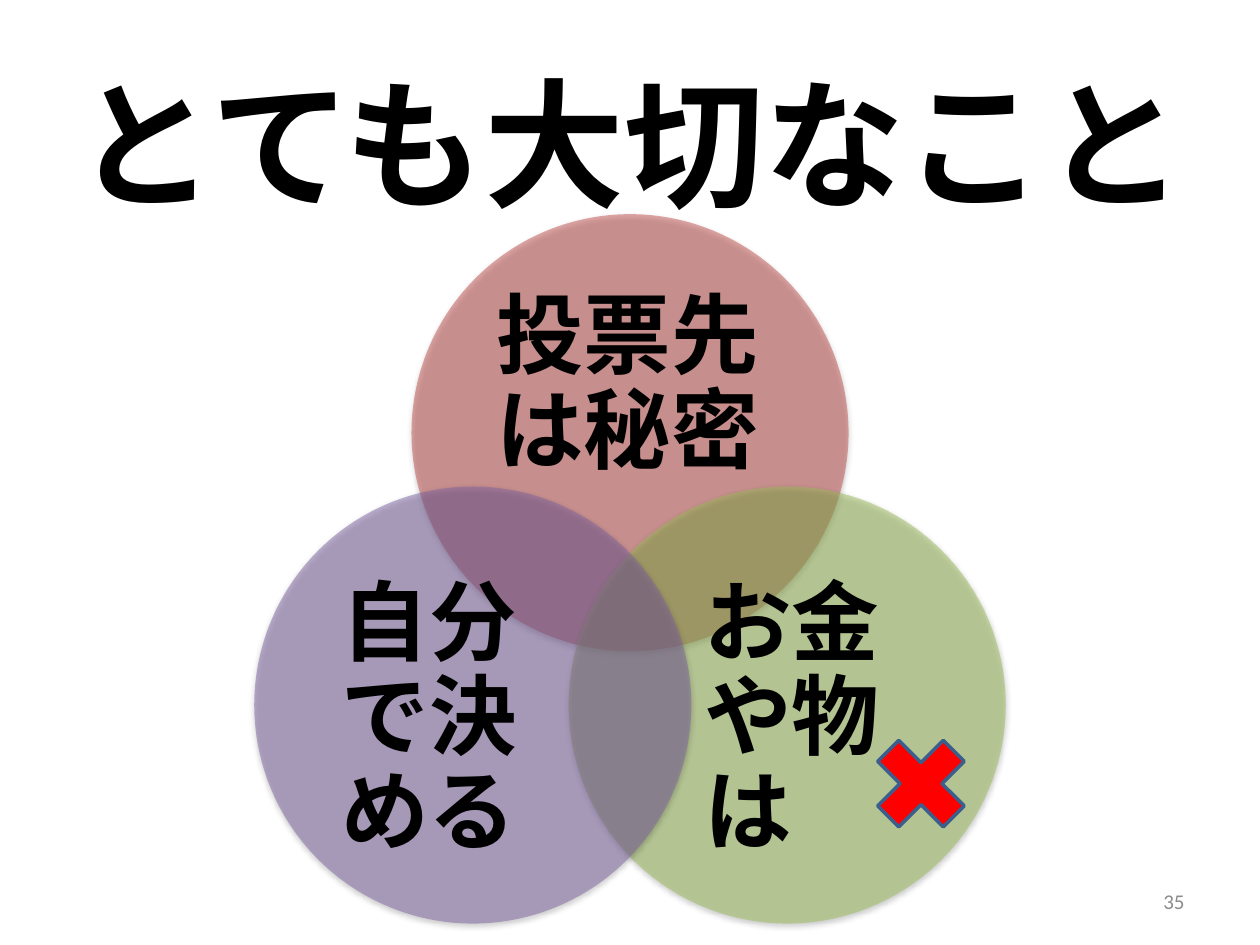
from math import cos, radians, sin

from lxml import etree
from pptx import Presentation
from pptx.dml.color import RGBColor
from pptx.enum.shapes import MSO_SHAPE
from pptx.enum.text import MSO_ANCHOR, PP_ALIGN
from pptx.oxml.ns import qn
from pptx.util import Inches, Pt

OVAL, CROSS = MSO_SHAPE.OVAL, MSO_SHAPE.MATH_MULTIPLY
LEFT, CENTER, RIGHT = PP_ALIGN.LEFT, PP_ALIGN.CENTER, PP_ALIGN.RIGHT
MIDDLE = MSO_ANCHOR.MIDDLE
TITLE_ONLY = 5

COLORS = {
    "text": "000000", "number": "8C8C8C", "shadow": "000000",
    "secret": "C0504D", "money": "9BBB59", "decide": "8064A2",
    "cross": "FF0000", "cross_line": "3A5F8C",
}
JAPANESE, LATIN = "Noto Sans CJK JP", "Calibri"

# Angle of the circle from the centre, colour, label, alignment,
# and label box as shares of the circle's diameter
CIRCLES = [
    (-90, "secret", "投票先は秘密", CENTER, (0.13, 0.17, 0.73, 0.45)),
    (30, "money", "お金や物は", LEFT, (0.31, 0.26, 0.6, 0.55)),
    (150, "decide", "自分で決める", CENTER, (0.1, 0.26, 0.6, 0.55)),
]


def color(name):
    return RGBColor.from_string(COLORS[name])


def inches(box):
    return [Inches(length) for length in box]


def write(shape, text, size, font_name, color_name, alignment, bold=False):
    """Fill a shape with one formatted, vertically centred paragraph."""
    frame = shape.text_frame
    frame.text = text
    frame.word_wrap = True
    frame.vertical_anchor = MIDDLE
    paragraph = frame.paragraphs[0]
    paragraph.alignment = alignment
    font = paragraph.runs[0].font
    font.name, font.size, font.bold = font_name, Pt(size), bold
    font.color.rgb = color(color_name)
    east_asian = etree.SubElement(font._element, qn("a:ea"))
    east_asian.set("typeface", font_name)
    return paragraph


def add_title(slide, box):
    title = slide.shapes.title
    title.left, title.top, title.width, title.height = inches(box)
    write(title, "とても大切なこと", 80, JAPANESE, "text", CENTER, True)


def make_translucent(shape, percent):
    fill_color = shape._element.spPr.find(qn("a:solidFill"))[0]
    etree.SubElement(fill_color, qn("a:alpha")).set("val", str(percent * 1000))


def add_shadow(shape):
    shape.shadow.inherit = False
    effects = shape._element.spPr.find(qn("a:effectLst"))
    shadow = etree.SubElement(
        effects, qn("a:outerShdw"), blurRad=str(Pt(3.1)), dist=str(Pt(1.6)),
        dir=str(90 * 60000), rotWithShape="0")
    tone = etree.SubElement(shadow, qn("a:srgbClr"), val=COLORS["shadow"])
    etree.SubElement(tone, qn("a:alpha"), val="38000")


def add_circle(slide, box, fill_name, label, alignment, label_shares):
    left, top, diameter, _ = box
    circle = slide.shapes.add_shape(OVAL, *inches(box))
    circle.fill.solid()
    circle.fill.fore_color.rgb = color(fill_name)
    make_translucent(circle, 50)
    circle.line.fill.background()
    add_shadow(circle)

    x, y, width, height = [share * diameter for share in label_shares]
    text_box = slide.shapes.add_textbox(*inches((left + x, top + y, width, height)))
    frame = text_box.text_frame
    frame.margin_left = frame.margin_right = 0
    frame.margin_top = frame.margin_bottom = 0
    paragraph = write(text_box, label, 50, JAPANESE, "text", alignment, True)
    paragraph.line_spacing = 0.9
    paragraph.space_after = Pt(17.5)


def add_venn(slide, box):
    """Three circles, with centres evenly spread around one point."""
    left, top, width, height = box
    diameter = height / 1.623
    orbit = (height - diameter) / (1 + sin(radians(30)))
    center_x = left + width / 2
    center_y = top + diameter / 2 + orbit
    for angle, *content in CIRCLES:
        x = center_x + orbit * cos(radians(angle)) - diameter / 2
        y = center_y + orbit * sin(radians(angle)) - diameter / 2
        add_circle(slide, (x, y, diameter, diameter), *content)


def add_cross(slide, box):
    cross = slide.shapes.add_shape(CROSS, *inches(box))
    cross.shadow.inherit = False
    cross.fill.solid()
    cross.fill.fore_color.rgb = color("cross")
    cross.line.color.rgb = color("cross_line")
    cross.line.width = Pt(2)


def add_page_number(slide, box):
    text_box = slide.shapes.add_textbox(*inches(box))
    write(text_box, "35", 12, LATIN, "number", RIGHT)


def main():
    presentation = Presentation()
    presentation.slide_width, presentation.slide_height = Inches(10), Inches(7.5)
    slide = presentation.slides.add_slide(presentation.slide_layouts[TITLE_ONLY])
    add_title(slide, (0.35, 0.3, 9.3, 1.64))
    add_page_number(slide, (7.17, 6.95, 2.33, 0.4))
    add_venn(slide, (2.01, 1.7, 5.98, 5.63))
    add_cross(slide, (6.81, 5.72, 1, 1))
    presentation.save("out.pptx")


if __name__ == "__main__":
    main()
